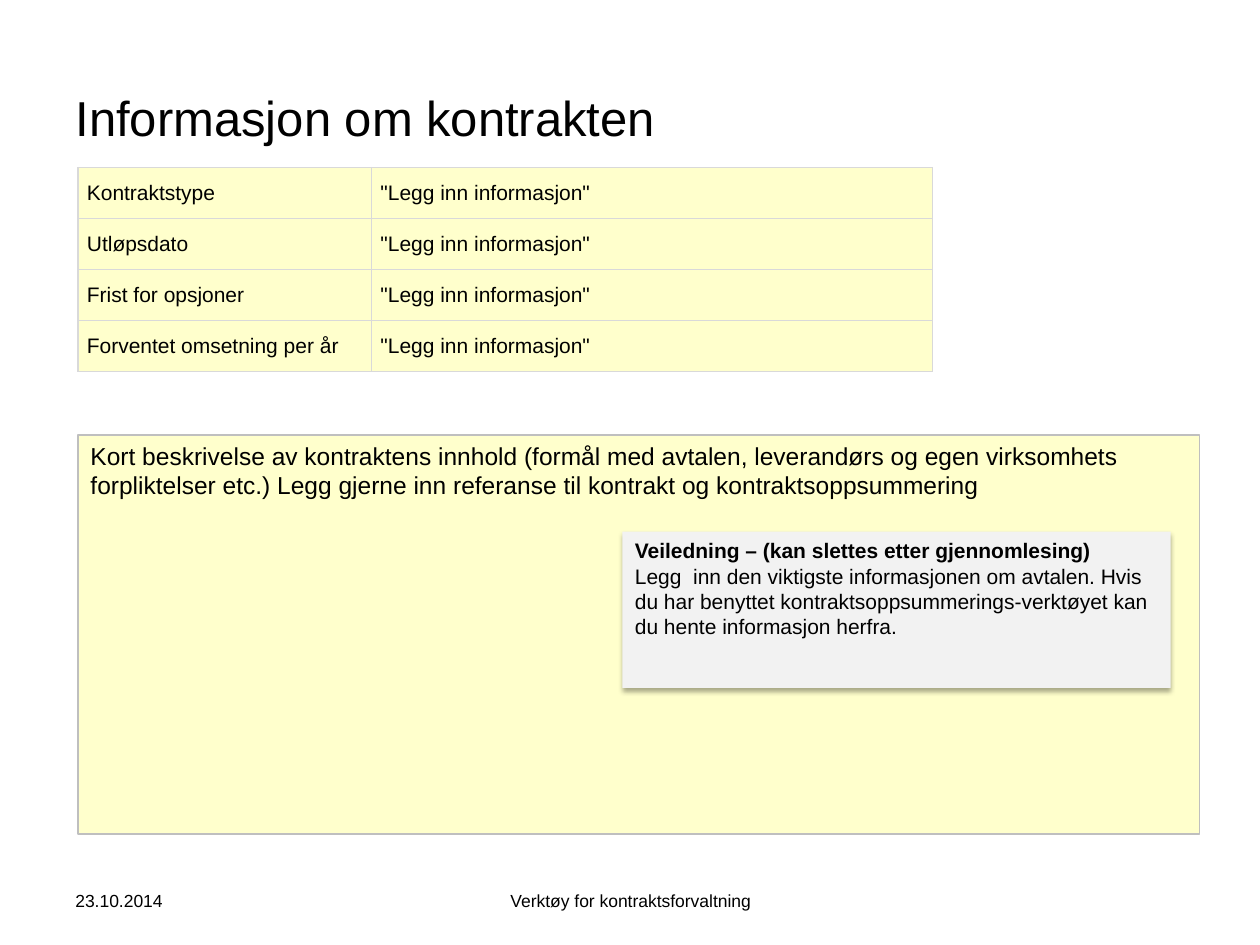
from lxml.etree import SubElement
from pptx import Presentation
from pptx.dml.color import RGBColor
from pptx.enum.shapes import MSO_SHAPE
from pptx.enum.text import MSO_ANCHOR, PP_ALIGN
from pptx.oxml.ns import qn
from pptx.util import Inches, Pt

YELLOW, GREY, BLACK = "FFFFCC", "F2F2F2", "000000"
BOX_LINE, TABLE_LINE = "BFBFBF", "D9D9D9"
LEFT = 0.62
COLUMN_WIDTHS = (2.33, 4.45)
ROW_HEIGHT = 0.405
PLACEHOLDER_TEXT = '"Legg inn informasjon"'
ROW_LABELS = ("Kontraktstype", "Utløpsdato", "Frist for opsjoner",
              "Forventet omsetning per år")


def color(value):
    return RGBColor.from_string(value)


def write(frame, lines, size, align=PP_ALIGN.LEFT, anchor=MSO_ANCHOR.TOP, bold_first=False):
    frame.word_wrap = True
    frame.vertical_anchor = anchor
    frame.text = "\n".join(lines)
    for index, paragraph in enumerate(frame.paragraphs):
        paragraph.alignment = align
        font = paragraph.font
        font.name, font.size = "Arial", Pt(size)
        font.bold = bold_first and index == 0
        font.color.rgb = color(BLACK)


def add_title(slide, text):
    title = slide.shapes.title
    title.left, title.top = Inches(0.5), Inches(0.3)
    title.width, title.height = Inches(9), Inches(1.25)
    write(title.text_frame, [text], 28, anchor=MSO_ANCHOR.MIDDLE)


def add_box(slide, box, fill, lines, size, line=None, bold_first=False):
    shape = slide.shapes.add_shape(MSO_SHAPE.RECTANGLE, *map(Inches, box))
    shape.fill.solid()
    shape.fill.fore_color.rgb = color(fill)
    if line:
        shape.line.color.rgb = color(line)
        shape.line.width = Pt(1)
    else:
        shape.line.fill.background()
    shape.shadow.inherit = False
    write(shape.text_frame, lines, size, bold_first=bold_first)
    return shape


def add_drop_shadow(shape):
    effects = shape.element.spPr.find(qn("a:effectLst"))
    shadow = SubElement(effects, qn("a:outerShdw"), blurRad=str(Pt(3.1)),
                        dist=str(Pt(1.8)), dir="5400000", rotWithShape="0")
    black = SubElement(shadow, qn("a:srgbClr"), val=BLACK)
    SubElement(black, qn("a:alpha"), val="35000")


def add_borders(cell):
    properties = cell._tc.get_or_add_tcPr()
    for side in "LRTB":
        border = SubElement(properties, qn(f"a:ln{side}"), w=str(Pt(1)))
        fill = SubElement(border, qn("a:solidFill"))
        SubElement(fill, qn("a:srgbClr"), val=TABLE_LINE)


def format_cell(cell, text):
    add_borders(cell)
    cell.fill.solid()
    cell.fill.fore_color.rgb = color(YELLOW)
    cell.margin_left = cell.margin_right = Inches(0.07)
    cell.margin_top = cell.margin_bottom = 0
    write(cell.text_frame, [text], 12)
    cell.vertical_anchor = MSO_ANCHOR.MIDDLE


def add_contract_table(slide):
    count = len(ROW_LABELS)
    table = slide.shapes.add_table(
        count, len(COLUMN_WIDTHS), Inches(LEFT), Inches(1.33),
        Inches(sum(COLUMN_WIDTHS)), Inches(ROW_HEIGHT * count)).table
    table.first_row = table.horz_banding = False
    for column, width in zip(table.columns, COLUMN_WIDTHS):
        column.width = Inches(width)
    for row, label in zip(table.rows, ROW_LABELS):
        row.height = Inches(ROW_HEIGHT)
        for cell, text in zip(row.cells, (label, PLACEHOLDER_TEXT)):
            format_cell(cell, text)


def add_footer(slide, left, width, text, align):
    footer = slide.shapes.add_textbox(Inches(left), Inches(6.95), Inches(width), Inches(0.4))
    write(footer.text_frame, [text], 10, align, MSO_ANCHOR.MIDDLE)


def main():
    presentation = Presentation()
    presentation.slide_width, presentation.slide_height = Inches(10), Inches(7.5)
    slide = presentation.slides.add_slide(presentation.slide_layouts[5])

    add_title(slide, "Informasjon om kontrakten")
    add_box(slide, (LEFT, 3.45, 8.9, 3.17), YELLOW, [
        "Kort beskrivelse av kontraktens innhold (formål med avtalen, leverandørs og egen "
        "virksomhets forpliktelser etc.) Legg gjerne inn referanse til kontrakt og "
        "kontraktsoppsummering"], 14, line=BOX_LINE)
    guidance = add_box(slide, (4.94, 4.22, 4.35, 1.24), GREY, [
        "Veiledning – (kan slettes etter gjennomlesing)",
        "Legg  inn den viktigste informasjonen om avtalen. Hvis du har benyttet "
        "kontraktsoppsummerings-verktøyet kan du hente informasjon herfra."],
        12, bold_first=True)
    add_drop_shadow(guidance)
    add_contract_table(slide)
    add_footer(slide, 0.5, 2.33, "23.10.2014", PP_ALIGN.LEFT)
    add_footer(slide, 3.42, 3.17, "Verktøy for kontraktsforvaltning", PP_ALIGN.CENTER)

    presentation.save("out.pptx")


if __name__ == "__main__":
    main()
